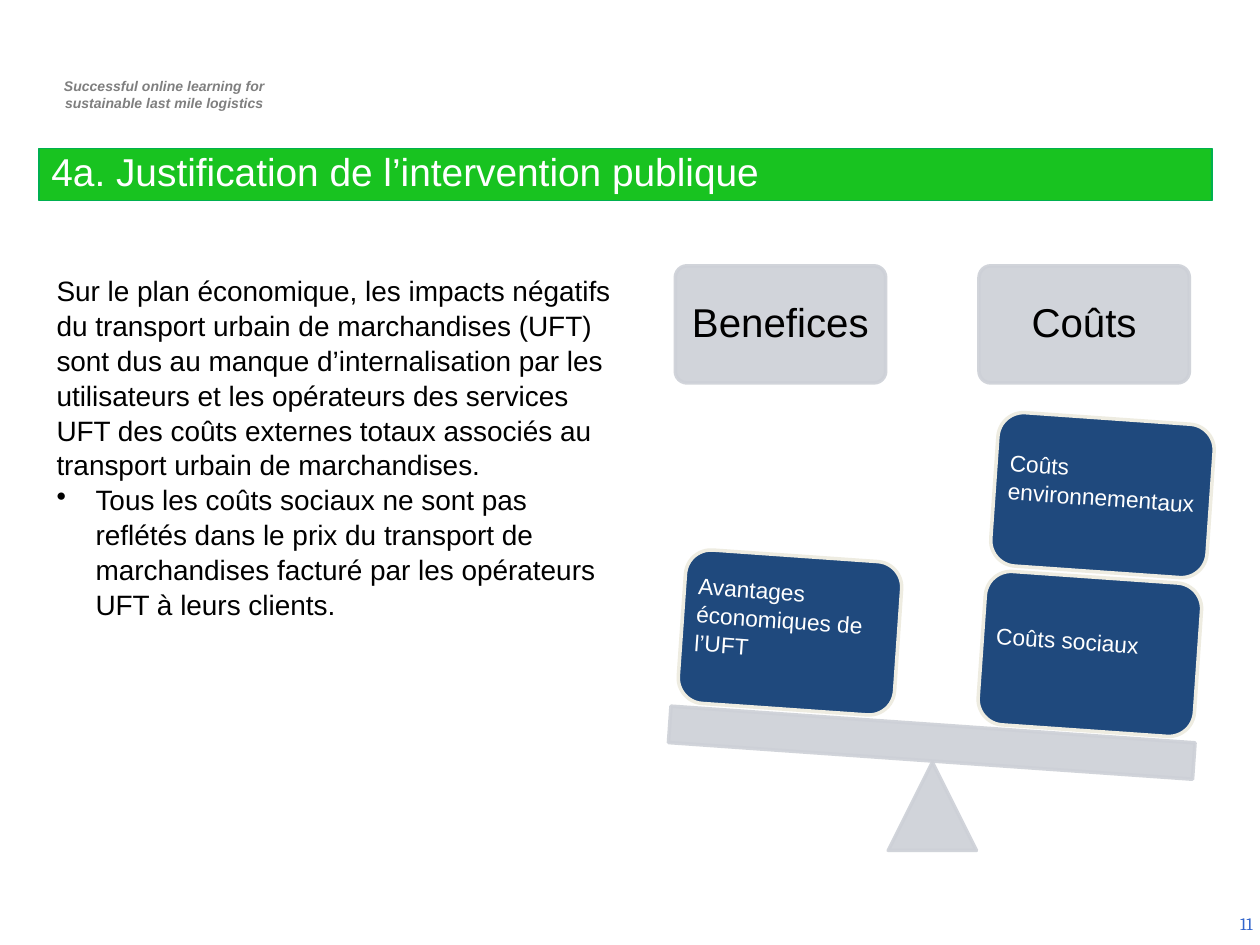
from lxml import etree
from pptx import Presentation
from pptx.dml.color import RGBColor
from pptx.enum.shapes import MSO_SHAPE
from pptx.enum.text import MSO_ANCHOR, PP_ALIGN
from pptx.oxml.ns import qn
from pptx.util import Inches, Pt

GREY, NAVY, CREAM = "CDD0D7", "1F497D", "EEECE1"
LEFT, MID, RIGHT = PP_ALIGN.LEFT, PP_ALIGN.CENTER, PP_ALIGN.RIGHT
TILT = 4

deck = Presentation()
deck.slide_width, deck.slide_height = Inches(10), Inches(7.5)
slide = deck.slides.add_slide(deck.slide_layouts[6])


def draw(kind, place, fill, edge, width):
    """Add a preset shape; grey ones are slightly see-through."""
    shape = slide.shapes.add_shape(kind, *map(Inches, place))
    shape.shadow.inherit = False
    shape.fill.solid()
    shape.fill.fore_color.rgb = RGBColor.from_string(fill)
    shape.line.color.rgb = RGBColor.from_string(edge)
    shape.line.width = Pt(width)
    if fill == GREY:
        for color in shape._element.spPr.iter(qn("a:srgbClr")):
            etree.SubElement(color, qn("a:alpha"), val="90000")
    return shape


def write(shape, lines, size, color, align=LEFT, anchor=MSO_ANCHOR.TOP,
          space=1.0, font="Arial"):
    frame = shape.text_frame
    frame.word_wrap = True
    frame.vertical_anchor = anchor
    frame.text = "\n".join(lines)
    for para in frame.paragraphs:
        para.alignment = align
        para.line_spacing = space
        para.font.size = Pt(size)
        para.font.name = font
        para.font.color.rgb = RGBColor.from_string(color)
    return frame


# Header, page number and title
header = slide.shapes.add_textbox(*map(Inches, (0.29, 0.56, 2.03, 0.37)))
motto = ["Successful online learning for", "sustainable last mile logistics"]
for para in write(header, motto, 8, "7F7F7F", MID, space=1.04).paragraphs:
    para.font.bold = para.font.italic = True

number = slide.shapes.add_textbox(*map(Inches, (7.71, 7.13, 2.33, 0.4)))
write(number, ["11"], 10, "3366CC", RIGHT, MSO_ANCHOR.MIDDLE, font="Cambria")

title = draw(MSO_SHAPE.RECTANGLE, (0.31, 1.18, 9.31, 0.41),
             "18C320", "00B050", 0.75)
write(title, ["4a. Justification de l’intervention publique"], 22.2, "FFFFFF",
      anchor=MSO_ANCHOR.BOTTOM, space=0.8)

# Body text
body = slide.shapes.add_textbox(*map(Inches, (0.35, 2.11, 4.65, 3.06)))
reasons = [
    "Sur le plan économique, les impacts négatifs du transport urbain de "
    "marchandises (UFT) sont dus au manque d’internalisation par les "
    "utilisateurs et les opérateurs des services UFT des coûts externes "
    "totaux associés au transport urbain de marchandises.",
    "Tous les coûts sociaux ne sont pas reflétés dans le prix du transport "
    "de marchandises facturé par les opérateurs UFT à leurs clients.",
]
point = write(body, reasons, 16, "000000", space=1.04).paragraphs[1]
props = point._p.get_or_add_pPr()
props.set("marL", str(Inches(0.31)))
props.set("indent", str(-Inches(0.31)))
bullet = etree.Element(qn("a:buChar"), char="•")
props.find(qn("a:defRPr")).addprevious(bullet)

# Balance: headings, support and beam
for name, left in (("Benefices", 5.36), ("Coûts", 7.77)):
    head = draw(MSO_SHAPE.ROUNDED_RECTANGLE, (left, 2.11, 1.67, 0.93),
                GREY, GREY, 2)
    head.adjustments[0] = 0.1
    write(head, [name], 23, "000000", MID, MSO_ANCHOR.MIDDLE, 0.9)

draw(MSO_SHAPE.ISOSCELES_TRIANGLE, (7.05, 6.05, 0.7, 0.7), GREY, GREY, 2)
beam = draw(MSO_SHAPE.RECTANGLE, (5.31, 5.75, 4.17, 0.29), GREY, GREY, 2)
beam.rotation = TILT

# Weights on the beam
weights = [
    ("Coûts sociaux", 7.79, 4.58),
    ("Coûts environnementaux", 7.89, 3.32),
    ("Avantages économiques de l’UFT", 5.41, 4.41),
]
for name, left, top in weights:
    block = draw(MSO_SHAPE.ROUNDED_RECTANGLE, (left, top, 1.72, 1.22),
                 NAVY, CREAM, 2)
    block.rotation = TILT
    frame = write(block, [name], 13, "FFFFFF", anchor=MSO_ANCHOR.MIDDLE,
                  space=1.04)
    frame.margin_left = frame.margin_top = Inches(0.05)
    frame.margin_right = Inches(0)
    frame.margin_bottom = Inches(0.25)

deck.save("out.pptx")
